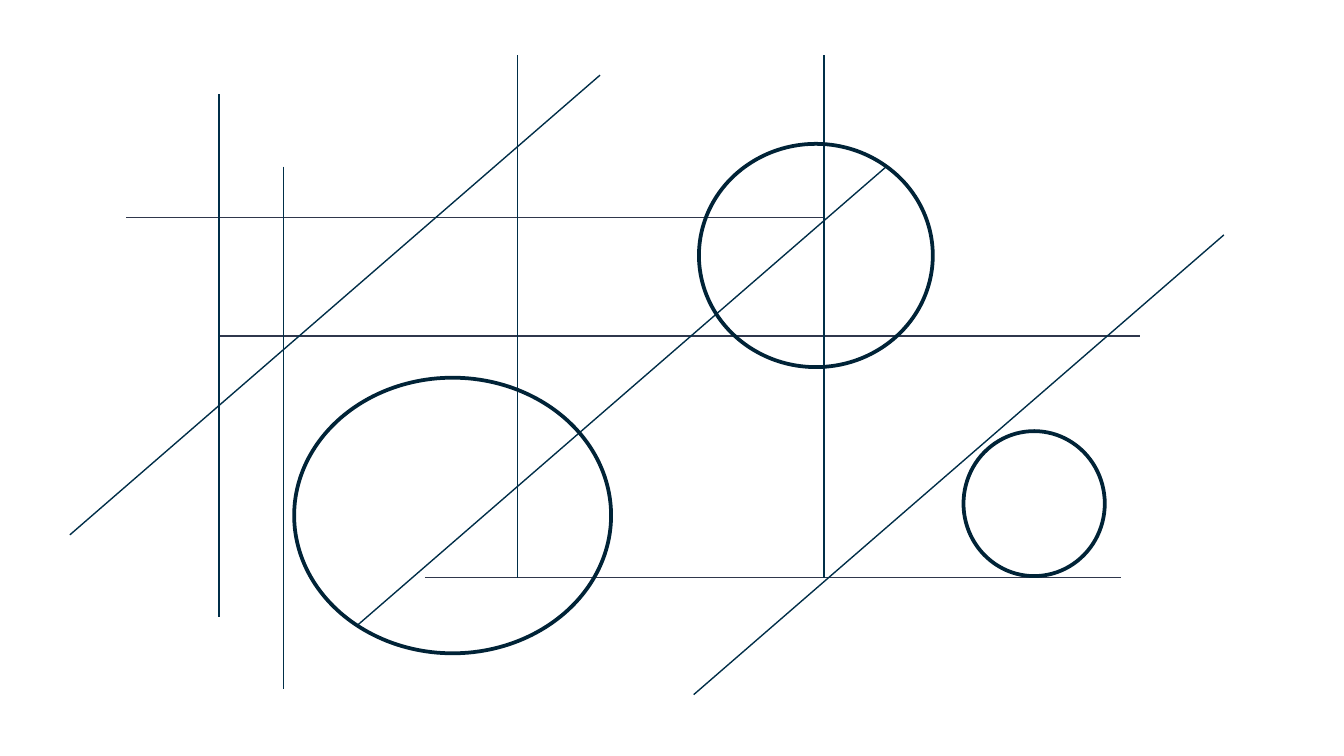
from dataclasses import dataclass

from pptx import Presentation
from pptx.dml.color import RGBColor
from pptx.enum.shapes import MSO_CONNECTOR, MSO_SHAPE
from pptx.oxml.xmlchemy import OxmlElement
from pptx.util import Cm, Pt


@dataclass(frozen=True)
class Theme:
    horizontal: str = "2F374C"
    guide: str = "002E48"
    circle: str = "002337"
    thin: float = 0.75
    thick: float = 2


THEME = Theme()
VERTICAL_LENGTH = 9.88
DIAGONAL_RUN, DIAGONAL_RISE = 10.02, 8.69

HORIZONTALS = [(1.07, 14.25, 3.07), (2.82, 20.22, 5.31), (6.71, 19.86, 9.88)]
VERTICALS = [(2.82, 0.74), (4.04, 2.11), (8.46, 0), (14.25, 0)]
DIAGONALS = [(0, 9.07), (5.41, 10.8), (11.79, 12.09)]
CIRCLES = [(4.24, 6.1, 5.99, 5.21), (11.89, 1.68, 4.42, 4.22), (16.89, 7.11, 2.67, 2.74)]


def set_line(shape, color, width):
    shape.line.color.rgb = RGBColor.from_string(color)
    shape.line.width = Pt(width)


def add_line(s, box, x1, y1, x2, y2, color):
    left, top = box
    line = s.shapes.add_connector(
        MSO_CONNECTOR.STRAIGHT,
        Cm(left + x1), Cm(top + y1), Cm(left + x2), Cm(top + y2),
    )
    set_line(line, color, THEME.thin)
    line._element.spPr.append(OxmlElement("a:effectLst"))


def add_circle(s, box, x, y, width, height):
    left, top = box
    sp = s.shapes.add_shape(
        MSO_SHAPE.OVAL, Cm(left + x), Cm(top + y), Cm(width), Cm(height)
    )
    sp.shadow.inherit = False
    sp.fill.background()
    set_line(sp, THEME.circle, THEME.thick)


def add_guides(s, box):
    for start, end, y in HORIZONTALS:
        add_line(s, box, start, y, end, y, THEME.horizontal)
    for x, y in VERTICALS:
        add_line(s, box, x, y, x, y + VERTICAL_LENGTH, THEME.guide)
    for x, y in DIAGONALS:
        add_line(s, box, x, y, x + DIAGONAL_RUN, y - DIAGONAL_RISE, THEME.guide)


def add_circles(s, box):
    for circle in CIRCLES:
        add_circle(s, box, *circle)


def main():
    prs = Presentation()
    prs.slide_width, prs.slide_height = Cm(25.4), Cm(14.29)
    s = prs.slides.add_slide(prs.slide_layouts[6])
    box = (1.32, 1.04)
    add_guides(s, box)
    add_circles(s, box)
    prs.save("out.pptx")


if __name__ == "__main__":
    main()
